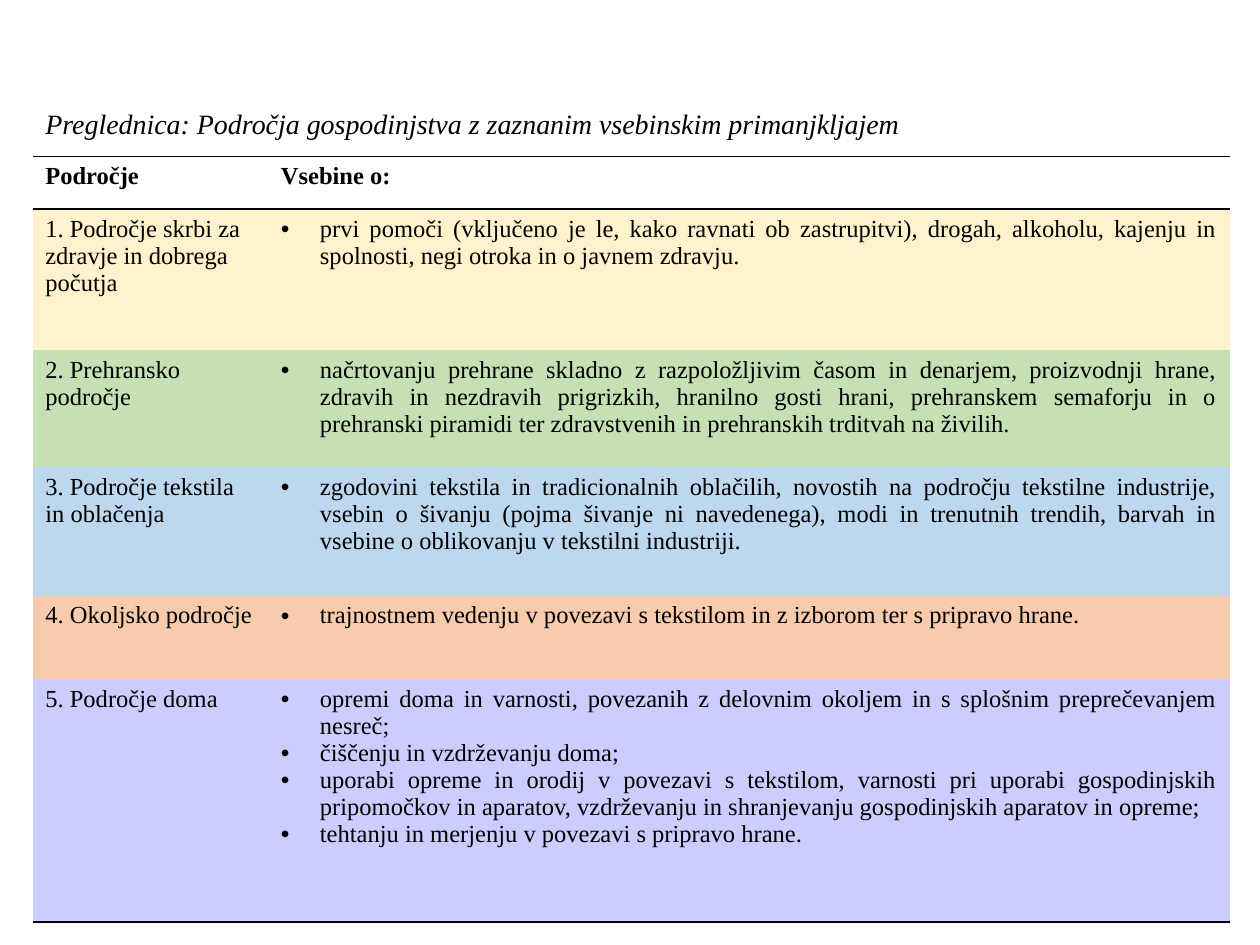
from lxml.etree import SubElement
from pptx import Presentation
from pptx.dml.color import RGBColor
from pptx.enum.text import MSO_ANCHOR, MSO_AUTO_SIZE, PP_ALIGN
from pptx.oxml import parse_xml
from pptx.oxml.ns import nsdecls, qn
from pptx.util import Inches, Pt

FONT = "Times New Roman"
INK = "000000"
NO_STYLE = "{2D5ABB26-0587-4C30-8999-92F81FD0307C}"
COLUMNS = [1.87, 7.63]
HEADER = ("Področje", "Vsebine o:")
AREAS = [
    ("1. Področje skrbi za zdravje in dobrega počutja", "FFF2CC", 1.12, [
        "prvi pomoči (vključeno je le, kako ravnati ob zastrupitvi), drogah, alkoholu, "
        "kajenju in spolnosti, negi otroka in o javnem zdravju."]),
    ("2. Prehransko področje", "C5E0B4", 0.93, [
        "načrtovanju prehrane skladno z razpoložljivim časom in denarjem, proizvodnji hrane, "
        "zdravih in nezdravih prigrizkih, hranilno gosti hrani, prehranskem semaforju in o "
        "prehranski piramidi ter zdravstvenih in prehranskih trditvah na živilih."]),
    ("3. Področje tekstila in oblačenja", "BDD7EE", 1.02, [
        "zgodovini tekstila in tradicionalnih oblačilih, novostih na področju tekstilne "
        "industrije, vsebin o šivanju (pojma šivanje ni navedenega), modi in trenutnih "
        "trendih, barvah in vsebine o oblikovanju v tekstilni industriji."]),
    ("4. Okoljsko področje", "F8CBAD", 0.66, [
        "trajnostnem vedenju v povezavi s tekstilom in z izborom ter s pripravo hrane."]),
    ("5. Področje doma", "CCCCFF", 1.93, [
        "opremi doma in varnosti, povezanih z delovnim okoljem in s splošnim "
        "preprečevanjem nesreč;",
        "čiščenju in vzdrževanju doma;",
        "uporabi opreme in orodij v povezavi s tekstilom, varnosti pri uporabi "
        "gospodinjskih pripomočkov in aparatov, vzdrževanju in shranjevanju "
        "gospodinjskih aparatov in opreme;",
        "tehtanju in merjenju v povezavi s pripravo hrane."]),
]


def rgb(value):
    return RGBColor.from_string(value)


def style_paragraph(p, size, align=PP_ALIGN.LEFT, bold=False, italic=False):
    p.alignment = align
    for r in p.runs:
        r.font.name = FONT
        r.font.size = Pt(size)
        r.font.bold = bold
        r.font.italic = italic
        r.font.color.rgb = rgb(INK)


def add_bullet(p):
    pPr = p._p.get_or_add_pPr()
    pPr.set("marL", str(Inches(0.31)))
    pPr.set("indent", str(-Inches(0.31)))
    SubElement(pPr, qn("a:buFont")).set("typeface", "Arial")
    SubElement(pPr, qn("a:buChar")).set("char", "•")


def add_rules(cell, sides):
    for side in sides:
        cell._tc.get_or_add_tcPr().append(parse_xml(
            f'<a:ln{side} {nsdecls("a")} w="{Pt(1)}"><a:solidFill>'
            f'<a:srgbClr val="{INK}"/></a:solidFill></a:ln{side}>'))


def fill_cell(cell, lines, align, fill=None, rules="", bold=False, bullets=False):
    tf = cell.text_frame
    tf.text = "\n".join(lines)
    for p in tf.paragraphs:
        if bullets:
            add_bullet(p)
        style_paragraph(p, 14, align, bold)
    add_rules(cell, rules)
    if fill:
        cell.fill.solid()
        cell.fill.fore_color.rgb = rgb(fill)
    else:
        cell.fill.background()


def add_caption(s, left, top, width, height):
    title = s.shapes.title
    title.left, title.top, title.width, title.height = left, top, width, height
    tf = title.text_frame
    tf.text = "Preglednica: Področja gospodinjstva z zaznanim vsebinskim primanjkljajem"
    tf.word_wrap = True
    tf.auto_size = MSO_AUTO_SIZE.NONE
    tf.vertical_anchor = MSO_ANCHOR.MIDDLE
    style_paragraph(tf.paragraphs[0], 16, italic=True)


def add_areas_table(s, left, top, width, height):
    heights = [0.42] + [area[2] for area in AREAS]
    table = s.shapes.add_table(len(heights), len(COLUMNS), left, top, width, height).table
    table.first_row = table.horz_banding = False
    table._tbl.tblPr.find(qn("a:tableStyleId")).text = NO_STYLE
    for column, share in zip(table.columns, COLUMNS):
        column.width = int(width * share / sum(COLUMNS))
    for row, share in zip(table.rows, heights):
        row.height = int(height * share / sum(heights))

    aligns = (PP_ALIGN.LEFT, PP_ALIGN.JUSTIFY)
    for col, (text, align) in enumerate(zip(HEADER, aligns)):
        fill_cell(table.cell(0, col), [text], align, rules="TB", bold=True)
    for row, (area, fill, _, topics) in enumerate(AREAS, 1):
        rules = "B" if row == len(AREAS) else ""
        fill_cell(table.cell(row, 0), [area], aligns[0], fill, rules)
        fill_cell(table.cell(row, 1), topics, aligns[1], fill, rules, bullets=True)


def main():
    prs = Presentation()
    prs.slide_width, prs.slide_height = Inches(10), Inches(7.5)
    s = prs.slides.add_slide(prs.slide_layouts[5])
    left, width = Inches(0.26), Inches(9.5)
    add_caption(s, left, Inches(0.79), width, Inches(0.37))
    add_areas_table(s, left, Inches(1.24), width, Inches(6.08))
    prs.save("out.pptx")


if __name__ == "__main__":
    main()
